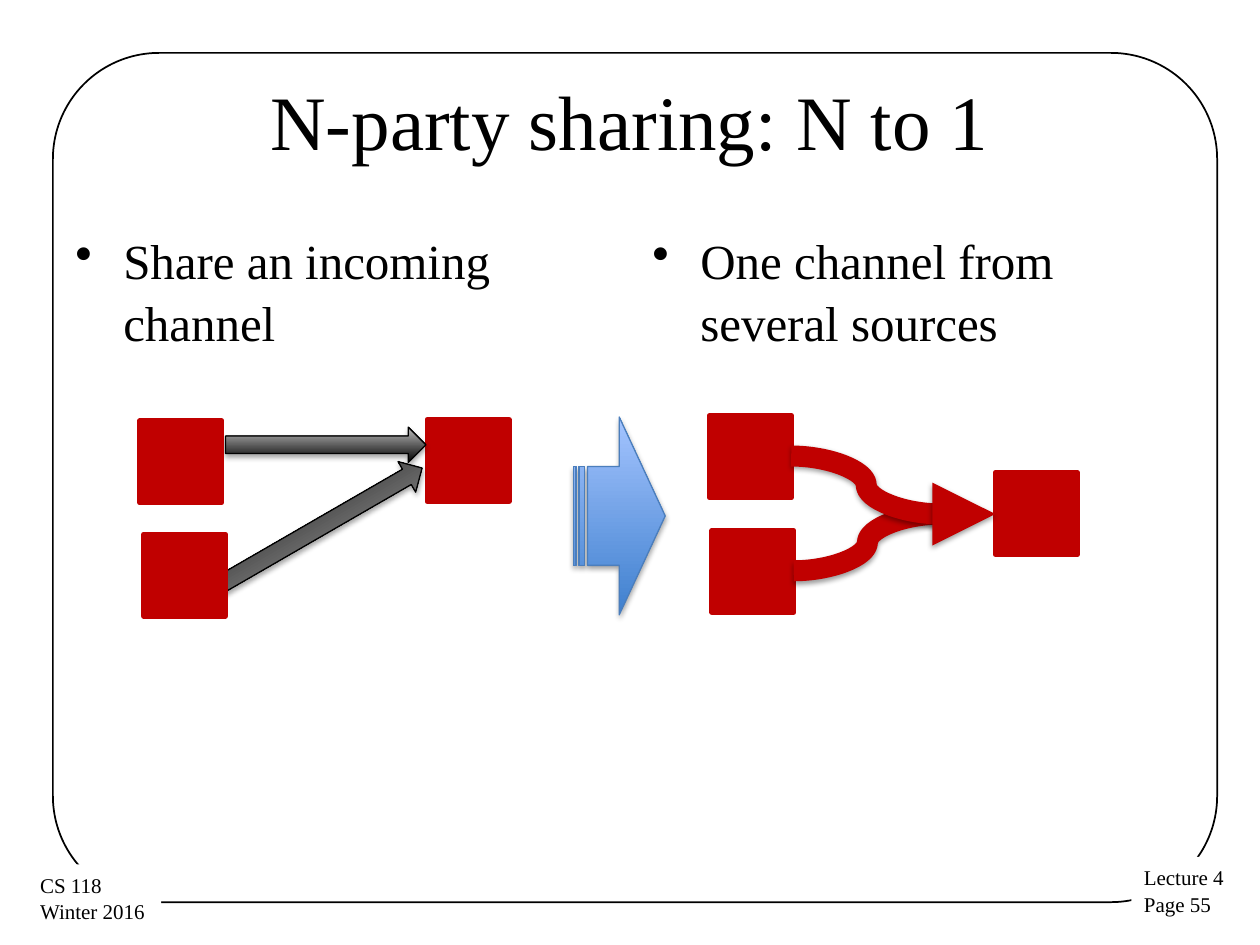
from lxml.etree import SubElement
from pptx import Presentation
from pptx.dml.color import RGBColor
from pptx.enum.shapes import MSO_CONNECTOR as Link, MSO_SHAPE as Kind
from pptx.enum.text import MSO_ANCHOR as Anchor, PP_ALIGN as Align
from pptx.oxml.ns import qn
from pptx.util import Inches, Pt

BLACK = RGBColor(0x00, 0x00, 0x00)
WHITE = RGBColor(0xFF, 0xFF, 0xFF)
RED = RGBColor(0xC0, 0x00, 0x00)
SILVER = RGBColor(0xBD, 0xBD, 0xBD)
BLUE = RGBColor(0x3F, 0x80, 0xCE)
PALE_BLUE = RGBColor(0xA4, 0xC4, 0xFF)
BLUE_EDGE = RGBColor(0x4B, 0x7E, 0xBC)
FONT = "Times New Roman"

TITLE = "N-party sharing: N to 1"
BULLETS = ["Share an incoming channel", "One channel from several sources"]
FOOTERS = [
    (["Lecture 4", "Page 55"], (8.98, 6.8, 0.85, 0.51)),
    (["CS 118", "Winter 2016"], (0.22, 6.86, 1.06, 0.51)),
]

MARGIN, COLUMN, GUTTER = 0.5, 4.42, 0.16
NODE = 0.65
MERGED_NODES = [(5.63, 3.3), (5.65, 4.21), (7.9, 3.75)]
TARGET_NODE = (3.39, 3.33)
SOURCE_NODES = [(1.11, 3.34), (1.14, 4.24)]
JOIN = (7.47, 4.08)
BRANCH_ENDS = [(6.3, 4.53), (6.28, 3.62)]
ARROWS = [((1.79, 3.39, 1.59, 0.28), 0), ((1.54, 4.06, 1.94, 0.28), 330)]

deck = Presentation()
deck.slide_width, deck.slide_height = Inches(10), Inches(7.5)
page = deck.slides.add_slide(deck.slide_layouts[6])


def add_text(lines, place, size, align=Align.LEFT, anchor=Anchor.TOP,
             fill=None, wrap=True, bullet=False):
    box = page.shapes.add_textbox(*map(Inches, place))
    if fill is not None:
        box.fill.solid()
        box.fill.fore_color.rgb = fill
    frame = box.text_frame
    frame.word_wrap, frame.vertical_anchor = wrap, anchor
    for index, line in enumerate(lines):
        para = frame.add_paragraph() if index else frame.paragraphs[0]
        para.alignment, para.line_spacing = align, 1.06
        span = para.add_run()
        span.text = line
        span.font.name, span.font.size = FONT, Pt(size)
        span.font.color.rgb = BLACK
        if bullet:
            para.space_before = Pt(size * 0.2)
            layout = para._p.get_or_add_pPr()
            layout.set("marL", str(Inches(0.38)))
            layout.set("indent", str(-Inches(0.38)))
            SubElement(layout, qn("a:buChar"), char="•")


def add_shape(kind, place, line, width, fill=None, gradient=None):
    shape = page.shapes.add_shape(kind, *map(Inches, place))
    shape.shadow.inherit = False
    shape.line.color.rgb, shape.line.width = line, Pt(width)
    if gradient:
        shape.fill.gradient()
        shape.fill.gradient_angle = 90
        for stop, color, position in zip(shape.fill.gradient_stops, gradient, (0, 1)):
            stop.color.rgb, stop.position = color, position
        add_shadow(shape, 35, 1.8)
    elif fill is not None:
        shape.fill.solid()
        shape.fill.fore_color.rgb = fill
    else:
        shape.fill.background()
    return shape


def add_shadow(shape, opacity, distance):
    properties = shape._element.spPr
    effects = properties.find(qn("a:effectLst"))
    if effects is None:
        effects = SubElement(properties, qn("a:effectLst"))
    shadow = SubElement(effects, qn("a:outerShdw"), blurRad=str(Pt(3.1)),
                        dist=str(Pt(distance)), dir="5400000", rotWithShape="0")
    color = SubElement(shadow, qn("a:srgbClr"), val=str(BLACK))
    SubElement(color, qn("a:alpha"), val=str(opacity * 1000))


def add_node(corner):
    add_shape(Kind.RECTANGLE, (*corner, NODE, NODE), RED, 3, fill=RED)


def add_curve(start, end, arrow=False):
    curve = page.shapes.add_connector(Link.CURVE, *map(Inches, (*start, *end)))
    curve.line.color.rgb, curve.line.width = RED, Pt(12)
    if arrow:
        SubElement(curve.line._get_or_add_ln(), qn("a:headEnd"), type="triangle")
    add_shadow(curve, 38, 1.6)


border = add_shape(Kind.ROUNDED_RECTANGLE, (0.42, 0.42, 9.24, 6.74), BLACK, 1)
border.adjustments[0] = 0.125
for lines, place in FOOTERS:
    add_text(lines, place, 12, fill=WHITE, wrap=False)

add_text([TITLE], (MARGIN, 0.3, 9, 1.25), 44, align=Align.CENTER, anchor=Anchor.MIDDLE)
for index, text in enumerate(BULLETS):
    left = MARGIN + index * (COLUMN + GUTTER)
    add_text([text], (left, 1.75, COLUMN, 4.95), 28, bullet=True)

for corner in MERGED_NODES:
    add_node(corner)
for end in BRANCH_ENDS:
    add_curve(JOIN, end)
add_curve((MERGED_NODES[-1][0], JOIN[1]), JOIN, arrow=True)

add_shape(Kind.STRIPED_RIGHT_ARROW, (4.55, 3.31, 0.73, 1.57), BLUE_EDGE, 0.75,
          gradient=(BLUE, PALE_BLUE))

add_node(TARGET_NODE)
for place, angle in ARROWS:
    arrow = add_shape(Kind.RIGHT_ARROW, place, BLACK, 0.75, gradient=(BLACK, SILVER))
    arrow.rotation = angle
    if angle:
        arrow._element.spPr.find(qn("a:xfrm")).set("flipV", "1")
for corner in SOURCE_NODES:
    add_node(corner)

deck.save("out.pptx")
